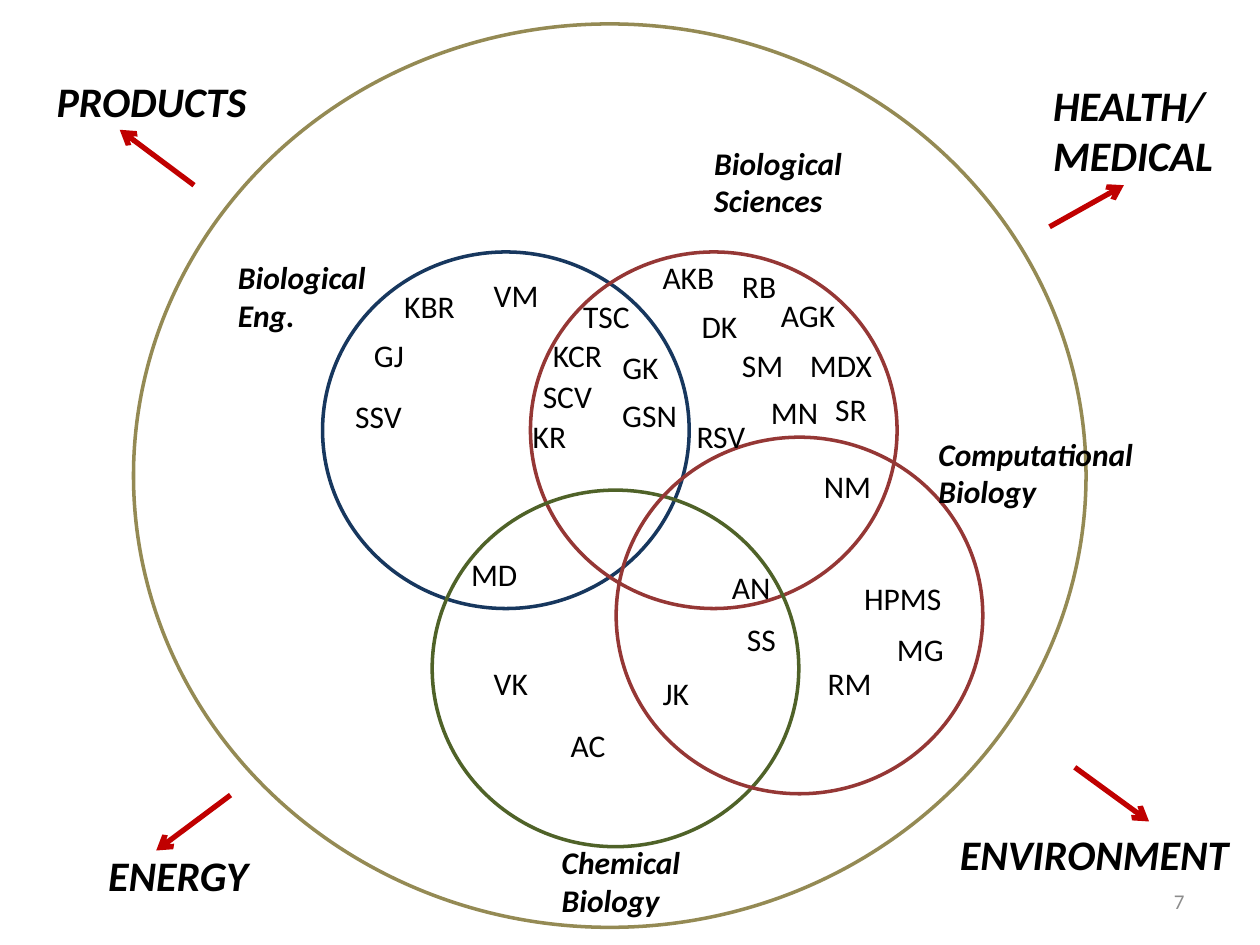
from lxml.etree import SubElement
from pptx import Presentation
from pptx.dml.color import RGBColor
from pptx.enum.shapes import MSO_CONNECTOR, MSO_SHAPE
from pptx.enum.text import MSO_ANCHOR, MSO_AUTO_SIZE, PP_ALIGN
from pptx.oxml.ns import qn
from pptx.util import Inches, Pt

BLACK = RGBColor(0x00, 0x00, 0x00)
GRAY = RGBColor(0x8C, 0x8C, 0x8C)
RED = RGBColor(0xC0, 0x00, 0x00)
NAVY = RGBColor(0x17, 0x37, 0x5E)
BRICK = RGBColor(0x95, 0x37, 0x35)
GREEN = RGBColor(0x4F, 0x62, 0x28)
TAN = RGBColor(0x94, 0x8A, 0x54)

prs = Presentation()
prs.slide_width, prs.slide_height = Inches(10), Inches(7.5)
slide = prs.slides.add_slide(prs.slide_layouts[6])
shapes = slide.shapes


def add_text(text, x, y, w, h, size=18, strong=False, color=BLACK):
    box = shapes.add_textbox(Inches(x), Inches(y), Inches(w), Inches(h))
    frame = box.text_frame
    frame.word_wrap = False
    frame.auto_size = MSO_AUTO_SIZE.SHAPE_TO_FIT_TEXT
    frame.text = text
    for para in frame.paragraphs:
        for run in para.runs:
            font = run.font
            font.name, font.size = "Calibri", Pt(size)
            font.bold = font.italic = strong
            font.color.rgb = color
    return frame


def add_ring(x, y, w, h, color):
    ring = shapes.add_shape(MSO_SHAPE.OVAL, Inches(x), Inches(y), Inches(w), Inches(h))
    ring.shadow.inherit = False
    ring.fill.background()
    ring.line.color.rgb = color
    ring.line.width = Pt(2)


# Outer goals, each with an arrow pointing to it
goals = [
    ("HEALTH/\vMEDICAL", 8.26, 0.58, 1.49, 0.91, (8.33, 1.8, 8.92, 1.47)),
    ("ENVIRONMENT", 7.52, 6.53, 2.36, 0.5, (8.53, 6.09, 9.12, 6.52)),
    ("ENERGY", 0.76, 6.69, 1.32, 0.5, (1.83, 6.31, 1.24, 6.75)),
    ("PRODUCTS", 0.35, 0.55, 1.72, 0.5, (1.54, 1.47, 0.95, 1.03)),
]
for text, x, y, w, h, ends in goals:
    arrow = shapes.add_connector(MSO_CONNECTOR.STRAIGHT, *map(Inches, ends))
    arrow.line.color.rgb = RED
    arrow.line.width = Pt(3)
    SubElement(arrow.line._get_or_add_ln(), qn("a:tailEnd"), type="arrow")
    SubElement(arrow._element.spPr, qn("a:effectLst"))
    add_text(text, x, y, w, h, size=24, strong=True)

# Field circles and the circle around them
for x, y, color in [(2.56, 2, NAVY), (4.21, 2, BRICK), (3.43, 3.89, GREEN),
                    (4.89, 3.47, BRICK)]:
    add_ring(x, y, 2.91, 2.83, color)
add_ring(1.06, 0.19, 7.56, 7.17, TAN)

# Field names
fields = [
    ("Biological \vEng.", 1.79, 2, 1.28),
    ("Biological \vSciences", 5.57, 1.09, 1.28),
    ("Chemical \vBiology", 4.36, 6.64, 1.27),
    ("Computational\nBiology", 7.35, 3.4, 1.76),
]
for text, x, y, w in fields:
    add_text(text, x, y, w, 0.71, strong=True)

# Initials of the members
members = [
    ("AKB", 5.16, 2, 0.62), ("RB", 5.79, 2.07, 0.48), ("AGK", 6.1, 2.3, 0.64),
    ("DK", 5.47, 2.39, 0.49), ("MDX", 6.33, 2.7, 0.7), ("SM", 5.79, 2.7, 0.53),
    ("MN", 6.02, 3.07, 0.58), ("NM", 6.44, 3.66, 0.58), ("RSV", 5.43, 3.26, 0.59),
    ("MG", 7.02, 4.95, 0.58), ("SR", 6.53, 3.05, 0.45), ("RM", 6.47, 5.22, 0.55),
    ("TSC", 4.53, 2.31, 0.57), ("KCR", 4.29, 2.62, 0.6), ("SCV", 4.21, 2.94, 0.6),
    ("GK", 4.84, 2.71, 0.49), ("GSN", 4.84, 3.09, 0.64), ("KR", 4.13, 3.26, 0.47),
    ("KBR", 3.11, 2.23, 0.61), ("GJ", 2.87, 2.62, 0.44), ("SSV", 2.72, 3.1, 0.58),
    ("HPMS", 6.76, 4.55, 0.82), ("VM", 3.82, 2.14, 0.56), ("MD", 3.64, 4.36, 0.57),
    ("SS", 5.83, 4.87, 0.43), ("AN", 5.71, 4.46, 0.51), ("VK", 3.82, 5.22, 0.48),
    ("AC", 4.43, 5.71, 0.48), ("JK", 5.16, 5.3, 0.41),
]
for text, x, y, w in members:
    add_text(text, x, y, w, 0.4)

# Page number
page = add_text("7", 7.17, 6.95, 2.33, 0.4, size=12, color=GRAY)
page.word_wrap = True
page.auto_size = MSO_AUTO_SIZE.NONE
page.vertical_anchor = MSO_ANCHOR.MIDDLE
page.paragraphs[0].alignment = PP_ALIGN.RIGHT

prs.save("out.pptx")
